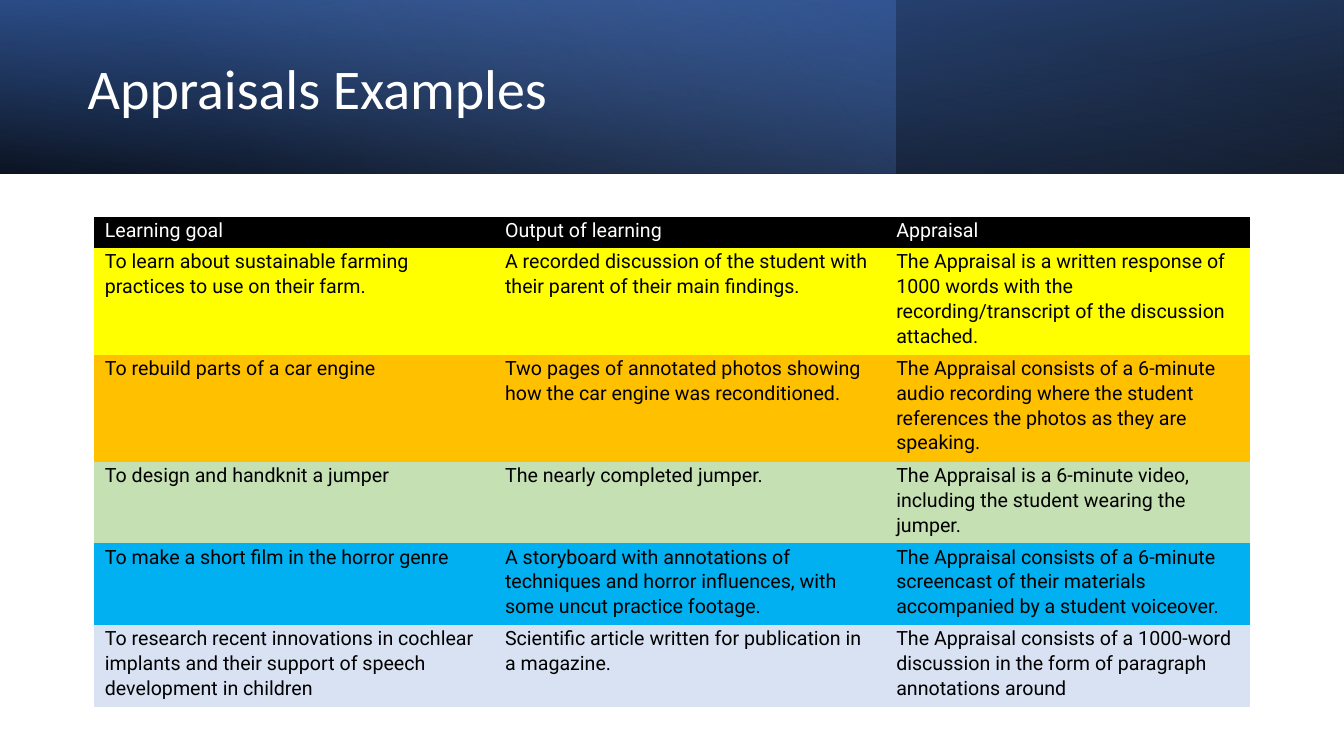
"""Build the Appraisals Examples slide: a gradient banner above a coloured table."""
from lxml import etree
from pptx import Presentation
from pptx.dml.color import RGBColor
from pptx.enum.shapes import MSO_SHAPE
from pptx.enum.text import MSO_ANCHOR, MSO_AUTO_SIZE, PP_ALIGN
from pptx.oxml.ns import qn
from pptx.util import Inches, Pt

RECTANGLE = MSO_SHAPE.RECTANGLE
MIDDLE, TOP = MSO_ANCHOR.MIDDLE, MSO_ANCHOR.TOP
LEFT = PP_ALIGN.LEFT
NO_AUTOFIT = MSO_AUTO_SIZE.NONE
NO_TABLE_STYLE = "{2D5ABB26-0587-4C30-8999-92F81FD0307C}"
TITLE_ONLY = 5
WIDTH, HEIGHT = Inches(13.33), Inches(7.5)
BANNER_HEIGHT = int(HEIGHT * 0.23)


def color(value):
    return RGBColor.from_string(value)


def style_paragraph(paragraph, font_name, size, font_color, spacing):
    paragraph.alignment = LEFT
    paragraph.line_spacing = spacing
    paragraph.font.name = font_name
    paragraph.font.size = Pt(size)
    paragraph.font.bold = False
    paragraph.font.color.rgb = color(font_color)


presentation = Presentation()
presentation.slide_width, presentation.slide_height = WIDTH, HEIGHT
slide = presentation.slides.add_slide(presentation.slide_layouts[TITLE_ONLY])

# width share, rotation, flipped, clockwise angle, (position, color, opacity) stops
banner_layers = [
    (1, 180, True, 100, [(0, "000000", 96), (1, "2F5597", 100)]),
    (2 / 3, 0, False, 140, [(0, "4472C4", 41), (0.74, "8FAADC", 0)]),
    (1, 0, True, 260, [(0, "000000", 63), (0.78, "4472C4", 15)]),
]
for share, rotation, flipped, angle, stops in banner_layers:
    layer = slide.shapes.add_shape(RECTANGLE, 0, 0, int(WIDTH * share), BANNER_HEIGHT)
    layer.shadow.inherit = False
    layer.line.fill.background()
    layer.rotation = rotation
    properties = layer._element.spPr
    if flipped:
        properties.find(qn("a:xfrm")).set("flipH", "1")
    layer.fill.gradient()
    layer.fill.gradient_angle = 360 - angle
    for gradient_stop, (position, stop_color, _) in zip(layer.fill.gradient_stops, stops):
        gradient_stop.position = position
        gradient_stop.color.rgb = color(stop_color)
    for color_element, (_, _, opacity) in zip(properties.iter(qn("a:srgbClr")), stops):
        etree.SubElement(color_element, qn("a:alpha")).set("val", str(opacity * 1000))

title = slide.shapes.title
title.left, title.top = Inches(0.77), Inches(0.27)
title.width, title.height = Inches(7.72), Inches(1.27)
title.text_frame.text = "Appraisals Examples"
title.text_frame.vertical_anchor = MIDDLE
title.text_frame.auto_size = NO_AUTOFIT
style_paragraph(title.text_frame.paragraphs[0], "Calibri", 40, "FFFFFF", 0.9)
slide.shapes._spTree.append(title._element)

column_widths = [3.97, 3.88, 3.62]
table_rows = [
    (0.31, "000000", "FFFFFF", [
        "Learning goal", "Output of learning", "Appraisal"]),
    (1.06, "FFFF00", "000000", [
        "To learn about sustainable farming practices to use on their farm.",
        "A recorded discussion of the student with their parent of their main findings.",
        "The Appraisal is a written response of 1000 words with the "
        "recording/transcript of the discussion attached."]),
    (1.06, "FFC000", "000000", [
        "To rebuild parts of a car engine",
        "Two pages of annotated photos showing how the car engine was reconditioned.",
        "The Appraisal consists of a 6-minute audio recording where the student "
        "references the photos as they are speaking."]),
    (0.81, "C5E0B3", "000000", [
        "To design and handknit a jumper",
        "The nearly completed jumper.",
        "The Appraisal is a 6-minute video, including the student wearing the jumper."]),
    (0.81, "00B0F0", "000000", [
        "To make a short film in the horror genre",
        "A storyboard with annotations of techniques and horror influences, "
        "with some uncut practice footage.",
        "The Appraisal consists of a 6-minute screencast of their materials "
        "accompanied by a student voiceover."]),
    (0.81, "D9E2F3", "000000", [
        "To research recent innovations in cochlear implants and their support "
        "of speech development in children",
        "Scientific article written for publication in a magazine.",
        "The Appraisal consists of a 1000-word discussion in the form of "
        "paragraph annotations around"]),
]
table_height = sum(row[0] for row in table_rows)
table = slide.shapes.add_table(
    len(table_rows), len(column_widths), Inches(0.93), Inches(2.15),
    Inches(sum(column_widths)), Inches(table_height)).table
table.first_row = table.horz_banding = False
table._tbl.tblPr.find(qn("a:tableStyleId")).text = NO_TABLE_STYLE
for column, width in zip(table.columns, column_widths):
    column.width = Inches(width)
for row, (height, fill_color, font_color, texts) in zip(table.rows, table_rows):
    row.height = Inches(height)
    for cell, text in zip(row.cells, texts):
        cell.fill.solid()
        cell.fill.fore_color.rgb = color(fill_color)
        cell.margin_left = cell.margin_right = Inches(0.11)
        cell.margin_top, cell.margin_bottom = Inches(0.01), 0
        cell.vertical_anchor = TOP
        cell.text = text
        style_paragraph(cell.text_frame.paragraphs[0], "Roboto", 14, font_color, 1.07)

presentation.save("out.pptx")
